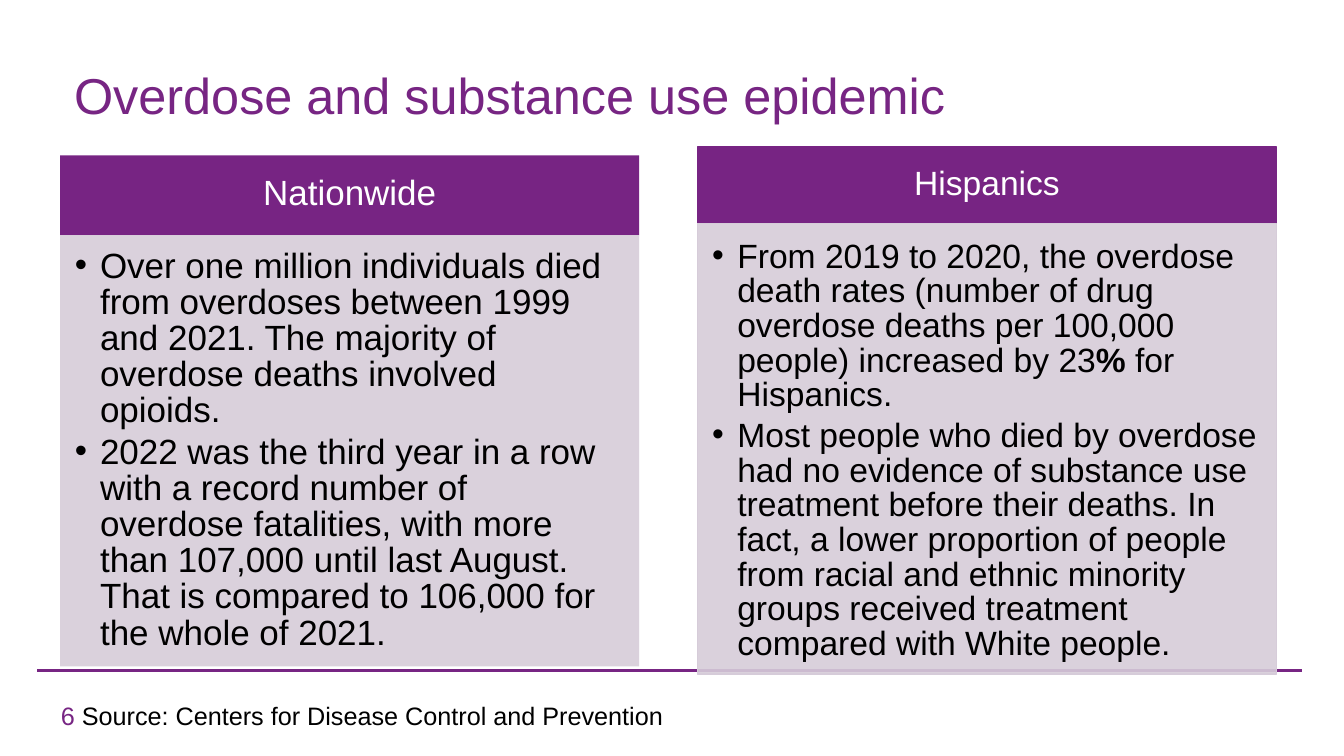
"""Builds a slide with two panels on the overdose and substance use epidemic."""
from lxml import etree
from pptx import Presentation, util as u
from pptx.dml.color import RGBColor
from pptx.enum import shapes, text
from pptx.oxml import ns

COLORS = {"title": "772583", "header": "772483", "panel": "D6CCD9",
          "light": "FFFFFF", "dark": "000000"}
PANEL_WIDTH = 413.5


def add_box(left, top, width, height, insets, fill=None, line=None):
    """Add a rectangle whose text starts at its top, with left, top and right insets."""
    shape = slide.shapes.add_shape(shapes.MSO_SHAPE.RECTANGLE, *map(u.Pt, (left, top, width, height)))
    shape.shadow.inherit = False
    for format_, color in ((shape.fill, fill), (shape.line.fill, line)):
        if color:
            format_.solid()
            format_.fore_color.rgb = RGBColor.from_string(COLORS[color])
        else:
            format_.background()
    if line:
        shape.line.width = u.Pt(1)
    frame_format = {"word_wrap": True, "vertical_anchor": text.MSO_ANCHOR.TOP, "margin_bottom": 0}
    frame_format.update(zip(("margin_left", "margin_top", "margin_right"), map(u.Pt, insets)))
    for name, value in frame_format.items():
        setattr(shape.text_frame, name, value)
    return shape


def write(paragraph, runs, size, align=text.PP_ALIGN.LEFT):
    """Fill a paragraph with (wording, color, bold) runs in Arial."""
    paragraph.alignment = align
    for wording, color, bold in runs:
        run = paragraph.add_run()
        run.text = wording
        for name, value in {"name": "Arial", "size": u.Pt(size), "bold": bold}.items():
            setattr(run.font, name, value)
        run.font.color.rgb = RGBColor.from_string(COLORS[color])


presentation = Presentation()
presentation.slide_width, presentation.slide_height = u.Pt(960), u.Pt(540)
slide = presentation.slides.add_slide(presentation.slide_layouts[6])

rule = slide.shapes.add_connector(shapes.MSO_CONNECTOR.STRAIGHT, *map(u.Pt, (26.6, 479.2, 930.2, 479.2)))
rule.line.color.rgb = RGBColor.from_string(COLORS["title"])
rule.line.width = u.Pt(2.28)
etree.SubElement(rule._element.spPr, ns.qn("a:effectLst"))

title = add_box(45.4, 7.5, 784, 84, (7.5, 38.2, 0))
write(title.text_frame.paragraphs[0], [("Overdose and substance use epidemic", "title", False)], 36)

panels = [
    {"heading": "Nationwide", "left": 43, "top": 111, "header": 57, "body": 308,
     "size": 25, "inset_top": 10, "inset_right": 22, "outlined": False,
     "points": [
         [("Over one million individuals died from overdoses between 1999 and 2021. "
           "The majority of overdose deaths involved opioids.", "dark", False)],
         [("2022 was the third year in a row with a record number of overdose fatalities, "
           "with more than 107,000 until last August. That is compared to 106,000 for "
           "the whole of 2021.", "dark", False)]]},
    {"heading": "Hispanics", "left": 498.2, "top": 105.1, "header": 54.7, "body": 321.8,
     "size": 24, "inset_top": 12, "inset_right": 11, "outlined": True,
     "points": [
         [("From 2019 to 2020, the overdose death rates (number of drug overdose deaths "
           "per 100,000 people) increased by 23", "dark", False),
          ("%", "dark", True), (" for Hispanics.", "dark", False)],
         [("Most people who died by overdose had no evidence of substance use treatment "
           "before their deaths. In fact, a lower proportion of people from racial and "
           "ethnic minority groups received treatment compared with White people.", "dark", False)]]},
]
for panel in panels:
    left, top, size = panel["left"], panel["top"], panel["size"]
    header = add_box(left, top, PANEL_WIDTH, panel["header"], (0, 10.8, 0),
                     "header", "header" if panel["outlined"] else None)
    write(header.text_frame.paragraphs[0], [(panel["heading"], "light", False)], size, text.PP_ALIGN.CENTER)

    body = add_box(left, top + panel["header"], PANEL_WIDTH, panel["body"],
                   (0, panel["inset_top"], panel["inset_right"]),
                   "panel", "panel" if panel["outlined"] else None)
    fill_color = body._element.spPr.find(ns.qn("a:solidFill"))[0]
    etree.SubElement(fill_color, ns.qn("a:alpha"), val="90000")
    for index, runs in enumerate(panel["points"]):
        paragraph = body.text_frame.add_paragraph() if index else body.text_frame.paragraphs[0]
        paragraph.line_spacing = 0.86
        paragraph.space_before = u.Pt(4.2 if index else 0)
        properties = paragraph._p.get_or_add_pPr()
        properties.set("marL", str(u.Pt(28.5)))
        properties.set("indent", str(u.Pt(-18)))
        etree.SubElement(properties, ns.qn("a:buFont"), typeface="Arial")
        etree.SubElement(properties, ns.qn("a:buChar"), char="•")
        write(paragraph, runs, size)

footer = add_box(42.5, 499, 440, 24, (1, 1, 0))
write(footer.text_frame.paragraphs[0],
      [("6 ", "title", False),
       ("Source: Centers for Disease Control and Prevention", "dark", False)], 18)

presentation.save("out.pptx")
